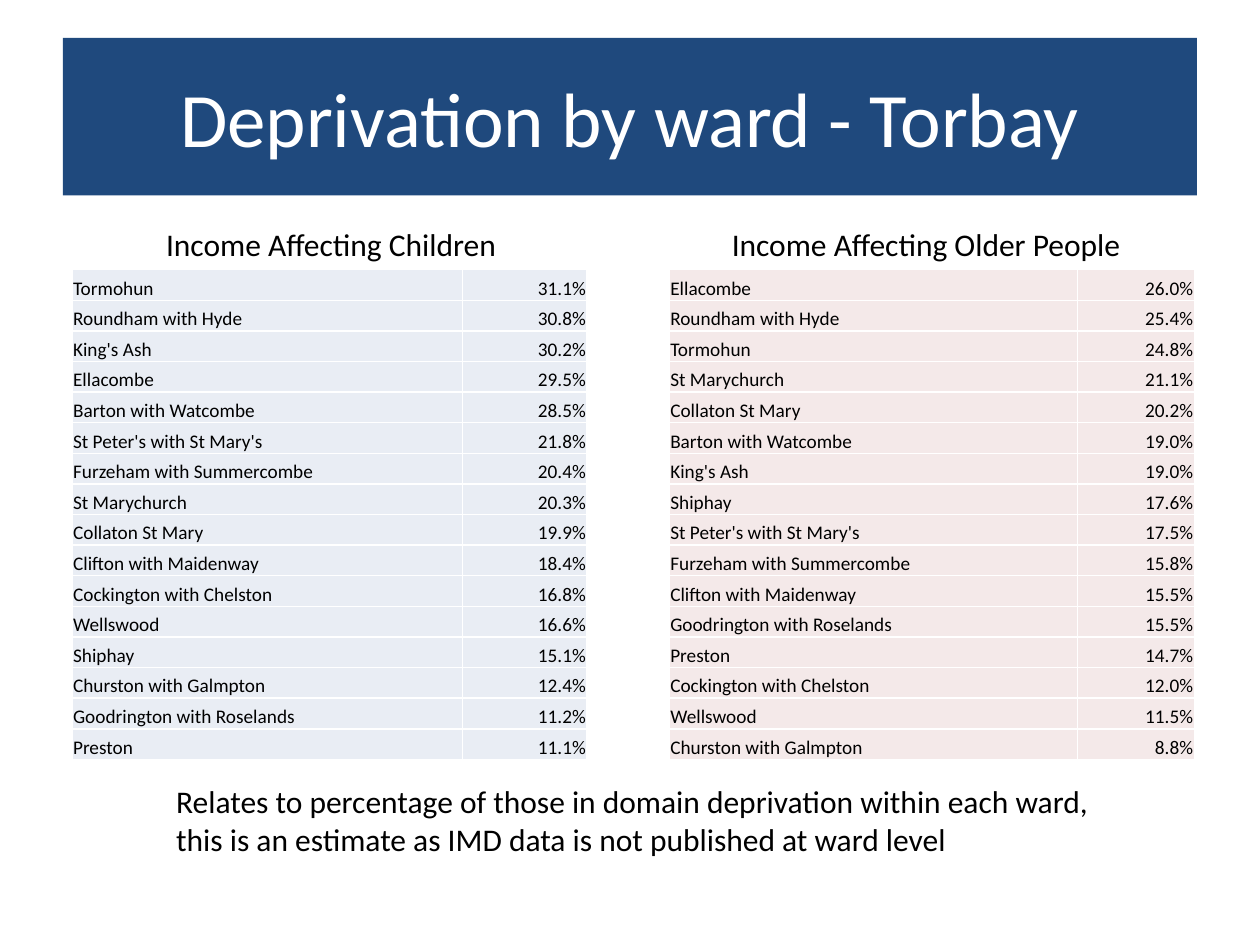
from dataclasses import dataclass

import pptx
import pptx.dml.color
import pptx.enum.shapes
import pptx.enum.text
import pptx.oxml
import pptx.oxml.ns
import pptx.util
from pptx.util import Inches

ALIGN = pptx.enum.text.PP_ALIGN
ANCHOR = pptx.enum.text.MSO_ANCHOR


@dataclass(frozen=True)
class Theme:
    font: str = "Calibri"
    navy: str = "1F497D"
    white: str = "FFFFFF"
    black: str = "000000"
    blue: str = "E9EDF4"
    pink: str = "F4E9E9"
    title: int = 44
    body: int = 18
    cell: int = 11


@dataclass(frozen=True)
class Panel:
    """One ranked table of wards with its heading."""
    head: str
    head_box: tuple[float, float, float, float]
    left: float
    cols: tuple[float, float]
    fill: str
    rows: tuple[tuple[str, str], ...]


THEME = Theme()
TABLE_TOP, TABLE_HIGH = 2.14, 3.89

PANELS = (
    Panel("Income Affecting Children", (1.22, 1.74, 2.86, 0.4), 0.57, (3.1, 0.99), THEME.blue, (
        ("Tormohun", "31.1%"),
        ("Roundham with Hyde", "30.8%"),
        ("King's Ash", "30.2%"),
        ("Ellacombe", "29.5%"),
        ("Barton with Watcombe", "28.5%"),
        ("St Peter's with St Mary's", "21.8%"),
        ("Furzeham with Summercombe", "20.4%"),
        ("St Marychurch", "20.3%"),
        ("Collaton St Mary", "19.9%"),
        ("Clifton with Maidenway", "18.4%"),
        ("Cockington with Chelston", "16.8%"),
        ("Wellswood", "16.6%"),
        ("Shiphay", "15.1%"),
        ("Churston with Galmpton", "12.4%"),
        ("Goodrington with Roselands", "11.2%"),
        ("Preston", "11.1%"),
    )),
    Panel("Income Affecting Older People", (5.71, 1.74, 3.33, 0.4), 5.31, (3.24, 0.93), THEME.pink, (
        ("Ellacombe", "26.0%"),
        ("Roundham with Hyde", "25.4%"),
        ("Tormohun", "24.8%"),
        ("St Marychurch", "21.1%"),
        ("Collaton St Mary", "20.2%"),
        ("Barton with Watcombe", "19.0%"),
        ("King's Ash", "19.0%"),
        ("Shiphay", "17.6%"),
        ("St Peter's with St Mary's", "17.5%"),
        ("Furzeham with Summercombe", "15.8%"),
        ("Clifton with Maidenway", "15.5%"),
        ("Goodrington with Roselands", "15.5%"),
        ("Preston", "14.7%"),
        ("Cockington with Chelston", "12.0%"),
        ("Wellswood", "11.5%"),
        ("Churston with Galmpton", "8.8%"),
    )),
)

NOTE = ("Relates to percentage of those in domain deprivation within each ward,\n"
        "this is an estimate as IMD data is not published at ward level")


def rgb(code: str) -> pptx.dml.color.RGBColor:
    return pptx.dml.color.RGBColor.from_string(code)


def write(frame, text: str, *, size: int = THEME.body, color: str = THEME.black,
          align=ALIGN.LEFT) -> None:
    """Fill a text frame, one paragraph for each line."""
    frame.text = text
    for para in frame.paragraphs:
        para.alignment = align
        for run in para.runs:
            run.font.name = THEME.font
            run.font.size = pptx.util.Pt(size)
            run.font.color.rgb = rgb(color)


def add_title(slide, text: str) -> None:
    bar = slide.shapes.add_shape(pptx.enum.shapes.MSO_SHAPE.RECTANGLE,
                                 Inches(0.5), Inches(0.3), Inches(9), Inches(1.25))
    bar.shadow.inherit = False
    bar.fill.solid()
    bar.fill.fore_color.rgb = rgb(THEME.navy)
    bar.line.fill.background()
    bar.text_frame.vertical_anchor = ANCHOR.MIDDLE
    write(bar.text_frame, text, size=THEME.title, color=THEME.white, align=ALIGN.CENTER)


def add_label(slide, text: str, box: tuple[float, float, float, float]) -> None:
    frame = slide.shapes.add_textbox(*map(Inches, box)).text_frame
    frame.word_wrap = False
    frame.auto_size = pptx.enum.text.MSO_AUTO_SIZE.SHAPE_TO_FIT_TEXT
    write(frame, text)


def add_edges(cell) -> None:
    """Draw a thin white border; it must come before the fill."""
    props = cell._tc.get_or_add_tcPr()
    for side in "LRTB":
        props.append(pptx.oxml.parse_xml(
            f'<a:ln{side} {pptx.oxml.ns.nsdecls("a")} w="{pptx.util.Pt(1)}">'
            f'<a:solidFill><a:srgbClr val="{THEME.white}"/></a:solidFill></a:ln{side}>'))


def add_cell(cell, text: str, fill: str, align) -> None:
    add_edges(cell)
    cell.fill.solid()
    cell.fill.fore_color.rgb = rgb(fill)
    cell.margin_left = cell.margin_right = cell.margin_top = Inches(0.01)
    cell.margin_bottom = 0
    cell.vertical_anchor = ANCHOR.BOTTOM
    write(cell.text_frame, text, size=THEME.cell, align=align)


def add_panel(slide, panel: Panel) -> None:
    table = slide.shapes.add_table(
        len(panel.rows), len(panel.cols), Inches(panel.left), Inches(TABLE_TOP),
        Inches(sum(panel.cols)), Inches(TABLE_HIGH)).table
    table.first_row = table.horz_banding = False
    for col, width in zip(table.columns, panel.cols):
        col.width = Inches(width)
    for row, texts in zip(table.rows, panel.rows):
        row.height = Inches(TABLE_HIGH / len(panel.rows))
        for cell, text, align in zip(row.cells, texts, (ALIGN.LEFT, ALIGN.RIGHT)):
            add_cell(cell, text, panel.fill, align)
    add_label(slide, panel.head, panel.head_box)


def main() -> None:
    deck = pptx.Presentation()
    deck.slide_width, deck.slide_height = Inches(10), Inches(7.5)
    slide = deck.slides.add_slide(deck.slide_layouts[6])
    add_title(slide, "Deprivation by ward - Torbay")
    for panel in PANELS:
        add_panel(slide, panel)
    add_label(slide, NOTE, (1.3, 6.16, 7.53, 0.71))
    deck.save("out.pptx")


if __name__ == "__main__":
    main()
